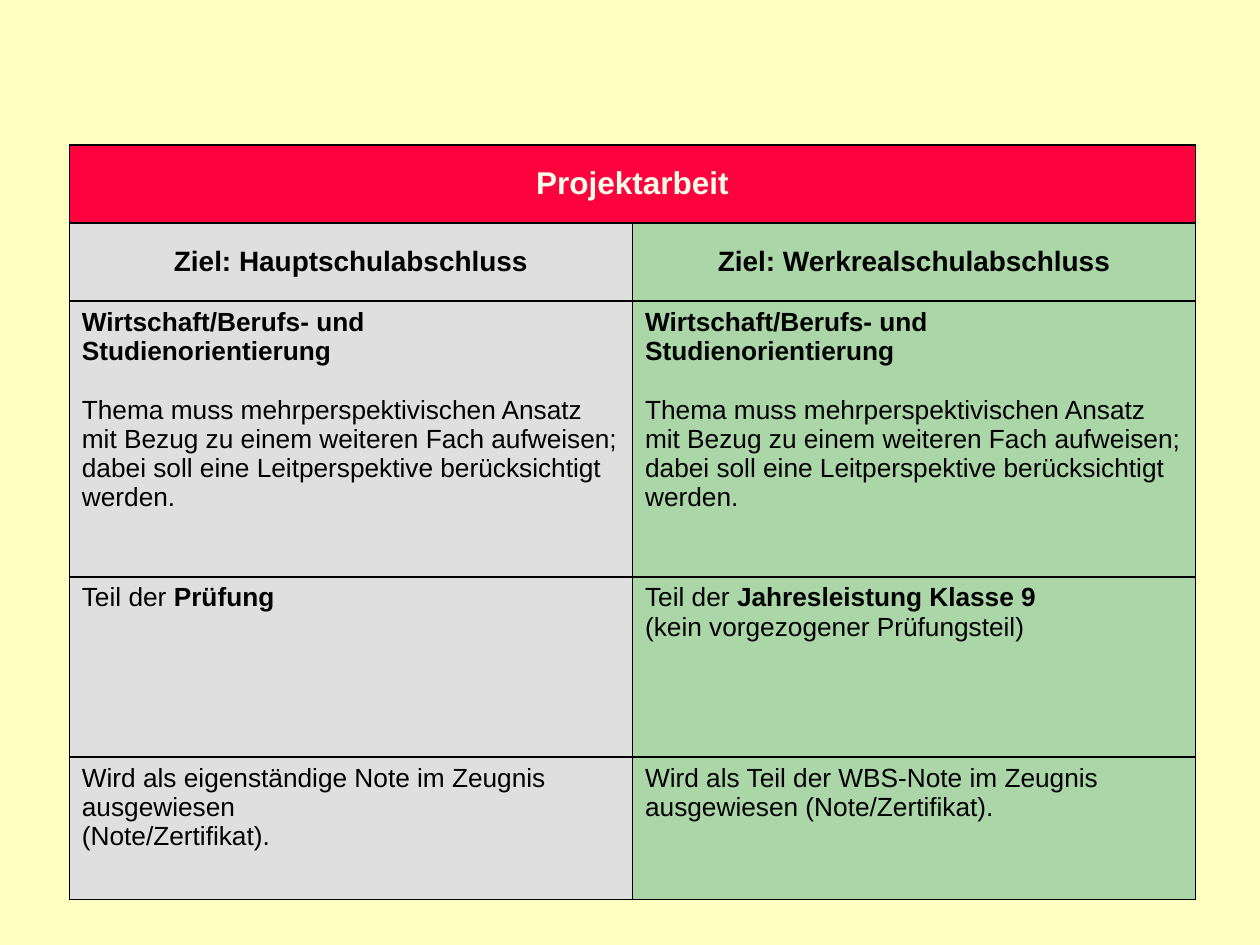
from lxml import etree
from pptx import Presentation
from pptx.dml.color import RGBColor
from pptx.enum.text import MSO_ANCHOR, PP_ALIGN
from pptx.oxml.ns import qn
from pptx.util import Inches, Pt

CENTER, LEFT = PP_ALIGN.CENTER, PP_ALIGN.LEFT
MIDDLE, TOP = MSO_ANCHOR.MIDDLE, MSO_ANCHOR.TOP

CREAM = RGBColor(0xFF, 0xFF, 0xC1)
IVORY = RGBColor(0xFF, 0xFD, 0xE9)
RED = RGBColor(0xFE, 0x02, 0x3E)
GRAY = RGBColor(0xDF, 0xDF, 0xDF)
GREEN = RGBColor(0x59, 0xAF, 0x8F)
BLACK = RGBColor(0, 0, 0)
COLUMN_FILLS = (GRAY, GREEN)
GREEN_ALPHA = 50

# A cell is a list of paragraphs, a paragraph a list of (text, bold) spans.
TITLE = [[("Projektarbeit", True)]]
GOALS = (
    [[("Ziel: Hauptschulabschluss", True)]],
    [[("Ziel: Werkrealschulabschluss", True)]],
)
TOPIC = [
    [("Wirtschaft/Berufs- und Studienorientierung", True)],
    [("Thema muss mehrperspektivischen Ansatz mit Bezug zu einem weiteren Fach "
      "aufweisen; dabei soll eine Leitperspektive berücksichtigt werden.", False)],
]
EXAM = (
    [[("Teil der ", False), ("Prüfung", True)]],
    [[("Teil der ", False), ("Jahresleistung Klasse 9", True)],
     [("(kein vorgezogener Prüfungsteil)", False)]],
)
GRADE = (
    [[("Wird als eigenständige Note im Zeugnis ausgewiesen", False)],
     [("(Note/Zertifikat).", False)]],
    [[("Wird als Teil der WBS-Note im Zeugnis ausgewiesen (Note/Zertifikat).", False)]],
)
ROWS = (GOALS, (TOPIC, TOPIC), EXAM, GRADE)

TABLE_LEFT, TABLE_TOP = 0.55, 1.15
COLUMN_WIDTH = 4.47
ROW_HEIGHTS = (0.62, 0.62, 2.19, 1.43, 1.13)
TOPIC_GAP = Pt(17)

TITLE_STYLE = {"size": Pt(18), "color": IVORY, "align": CENTER, "anchor": MIDDLE}
GOAL_STYLE = {"size": Pt(16), "color": BLACK, "align": CENTER, "anchor": MIDDLE}
BODY_STYLE = {"size": Pt(15), "color": BLACK, "align": LEFT, "anchor": TOP}


def write_cell(cell, paragraphs, style):
    cell.vertical_anchor = style["anchor"]
    frame = cell.text_frame
    for index, spans in enumerate(paragraphs):
        para = frame.add_paragraph() if index else frame.paragraphs[0]
        para.alignment = style["align"]
        for text, bold in spans:
            span = para.add_run()
            span.text = text
            font_values = {"name": "Arial", "size": style["size"], "bold": bold}
            for name, value in font_values.items():
                setattr(span.font, name, value)
            span.font.color.rgb = style["color"]


def paint_cell(cell, color):
    """Draw the black borders, then the fill, which must follow them in the XML."""
    properties = cell._tc.get_or_add_tcPr()
    for side in ("a:lnL", "a:lnR", "a:lnT", "a:lnB"):
        line = etree.SubElement(properties, qn(side), w=str(Pt(1)))
        solid = etree.SubElement(line, qn("a:solidFill"))
        etree.SubElement(solid, qn("a:srgbClr"), val=str(BLACK))
    cell.fill.solid()
    cell.fill.fore_color.rgb = color
    if color == GREEN:
        green = properties.find(qn("a:solidFill")).find(qn("a:srgbClr"))
        etree.SubElement(green, qn("a:alpha"), val=str(GREEN_ALPHA * 1000))


def main():
    deck = Presentation()
    deck.slide_width, deck.slide_height = Inches(10), Inches(7.5)
    page = deck.slides.add_slide(deck.slide_layouts[6])
    page.background.fill.solid()
    page.background.fill.fore_color.rgb = CREAM

    columns = len(COLUMN_FILLS)
    table = page.shapes.add_table(
        len(ROW_HEIGHTS), columns, Inches(TABLE_LEFT), Inches(TABLE_TOP),
        Inches(COLUMN_WIDTH * columns), Inches(sum(ROW_HEIGHTS))).table
    for column in table.columns:
        column.width = Inches(COLUMN_WIDTH)
    for row, height in zip(table.rows, ROW_HEIGHTS):
        row.height = Inches(height)

    title_cell = table.cell(0, 0)
    title_cell.merge(table.cell(0, columns - 1))
    write_cell(title_cell, TITLE, TITLE_STYLE)
    for column in range(columns):
        paint_cell(table.cell(0, column), RED)

    for row, contents in enumerate(ROWS, start=1):
        style = GOAL_STYLE if contents is GOALS else BODY_STYLE
        for column, paragraphs in enumerate(contents):
            cell = table.cell(row, column)
            write_cell(cell, paragraphs, style)
            paint_cell(cell, COLUMN_FILLS[column])
            if paragraphs is TOPIC:
                cell.text_frame.paragraphs[0].space_after = TOPIC_GAP

    deck.save("out.pptx")


if __name__ == "__main__":
    main()
